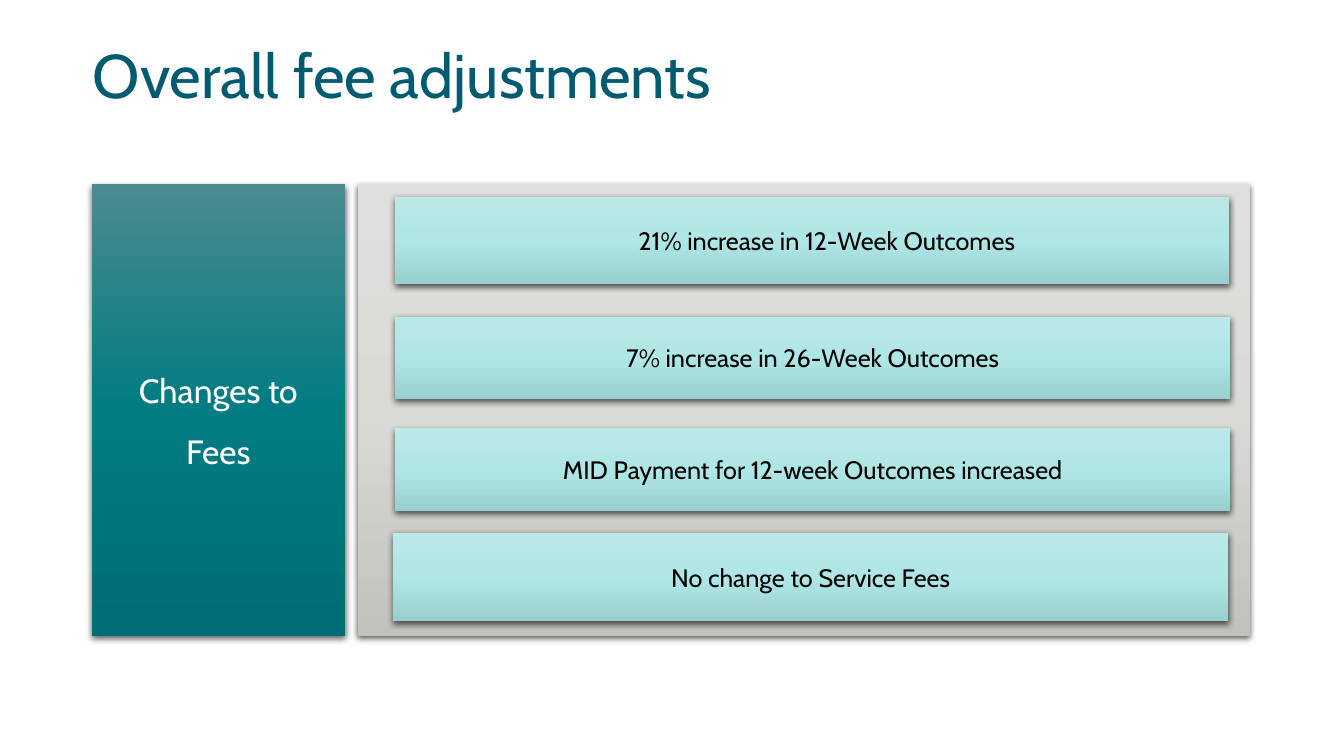
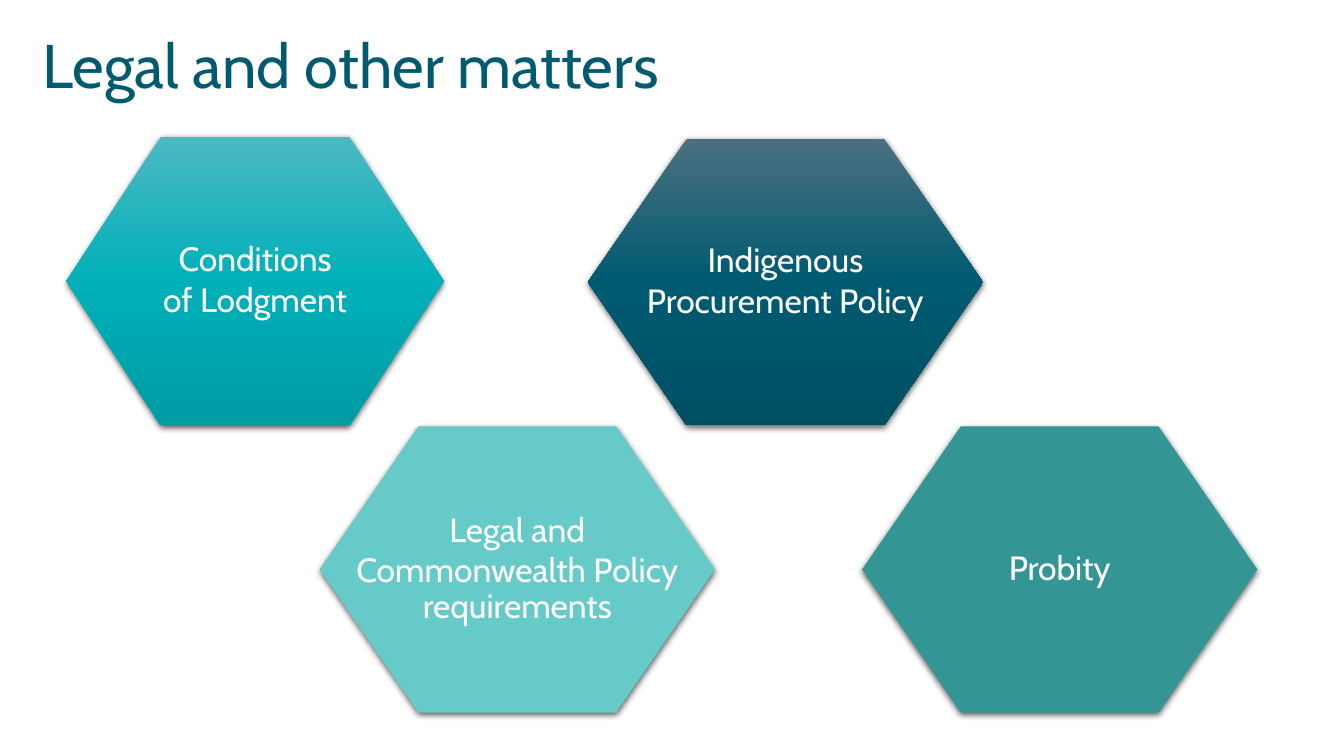
from copy import deepcopy

from pptx import Presentation
from pptx.dml.color import RGBColor
from pptx.enum.shapes import MSO_SHAPE
from pptx.enum.text import MSO_ANCHOR, PP_ALIGN
from pptx.oxml import parse_xml
from pptx.oxml.ns import nsdecls, qn
from pptx.util import Inches, Pt

FONT = "Cabin"
COLORS = {
    "title": "005A70",
    "light": "FFFFFF",
    "dark": "000000",
    "mint": "66CAC8",
    "green": "349694",
}
# Top, middle and bottom of each vertical gradient
GRADIENTS = {
    "panel": ("DFDFDD", "D9D9D6", "C1C1BE"),
    "bar": ("BCE8E7", "AEE7E5", "97D0CF"),
    "heading": ("4B8B90", "007C82", "006E74"),
    "turquoise": ("4BB9C2", "00B0B9", "009CA4"),
    "navy": ("4B7081", "005A70", "005064"),
}

PANEL_TOP, PANEL_HEIGHT = 1.83, 4.48
HEADING = "Changes to Fees"
# Text, (left, top, width, height), left inset
FEE_BARS = [
    ("21% increase in 12-Week Outcomes", (3.92, 1.95, 8.27, 0.87), 0.45),
    ("7% increase in 26-Week Outcomes", (3.92, 3.14, 8.28, 0.82), 0.16),
    ("MID Payment for 12-week Outcomes increased", (3.92, 4.25, 8.28, 0.82), 0.16),
    ("No change to Service Fees", (3.9, 5.29, 8.28, 0.87), 0.16),
]
# Paragraphs, (left, top, width, height), fill
LEGAL_HEXAGONS = [
    (["Conditions", "of Lodgment"], (0.66, 1.36, 3.74, 2.86), "turquoise"),
    (["Indigenous", "Procurement Policy"], (5.83, 1.38, 3.92, 2.84), "navy"),
    (["Legal and", "Commonwealth Policy requirements"], (3.17, 4.23, 3.92, 2.84), "mint"),
    (["Probity"], (8.55, 4.23, 3.92, 2.84), "green"),
]


def rgb(name):
    return RGBColor.from_string(COLORS[name])


def set_text(sp, paragraphs, size, color, align=PP_ALIGN.CENTER,
             anchor=MSO_ANCHOR.MIDDLE, insets=(0, 0, 0, 0), spacing=None, after=None):
    """Fill a shape with paragraphs; insets are left, top, right, bottom in inches."""
    tf = sp.text_frame
    tf.word_wrap = True
    tf.vertical_anchor = anchor
    tf.margin_left, tf.margin_top, tf.margin_right, tf.margin_bottom = map(Inches, insets)
    for i, text in enumerate(paragraphs):
        p = tf.paragraphs[0] if i == 0 else tf.add_paragraph()
        p.alignment = align
        p.line_spacing = spacing
        if after is not None:
            p.space_after = Pt(after)
        r = p.add_run()
        r.text = text
        r.font.name = FONT
        r.font.size = Pt(size)
        r.font.color.rgb = rgb(color)


def style(sp, fill):
    """Give a shape a solid or gradient fill, no outline and a soft shadow below."""
    if fill in GRADIENTS:
        sp.fill.gradient()
        sp.fill.gradient_angle = 270
        stops = sp._element.spPr.find(".//" + qn("a:gsLst"))
        stops.insert(1, deepcopy(stops[0]))
        for i, (stop, color) in enumerate(zip(sp.fill.gradient_stops, GRADIENTS[fill])):
            stop.position = i / 2
            stop.color.rgb = RGBColor.from_string(color)
    else:
        sp.fill.solid()
        sp.fill.fore_color.rgb = rgb(fill)
    sp.line.fill.background()
    sp.shadow.inherit = False
    sp._element.spPr.find(qn("a:effectLst")).append(parse_xml(
        f'<a:outerShdw {nsdecls("a")} blurRad="{Pt(4.5)}" dist="{Pt(1.5)}" '
        'dir="5400000" rotWithShape="0"><a:srgbClr val="000000">'
        '<a:alpha val="63000"/></a:srgbClr></a:outerShdw>'))
    return sp


def add_rect(slide, box, fill):
    return style(slide.shapes.add_shape(MSO_SHAPE.RECTANGLE, *map(Inches, box)), fill)


def add_hexagon(slide, box, fill):
    left, top, width, height = box
    right, bottom, middle = left + width, top + height, top + height / 2
    inset = width / 4
    points = [(Inches(x), Inches(y)) for x, y in [
        (right - inset, top), (left + inset, top), (left, middle),
        (left + inset, bottom), (right - inset, bottom), (right, middle)]]
    outline = slide.shapes.build_freeform(*points[0])
    outline.add_line_segments(points[1:], close=True)
    return style(outline.convert_to_shape(), fill)


def add_titled_slide(prs, title, left, top):
    slide = prs.slides.add_slide(prs.slide_layouts[6])
    box = slide.shapes.add_textbox(*map(Inches, (left, top, 11.49, 0.74)))
    set_text(box, [title], 44, "title", align=PP_ALIGN.LEFT, anchor=MSO_ANCHOR.BOTTOM)
    return slide


def build_fees(prs):
    slide = add_titled_slide(prs, "Overall fee adjustments", 0.92, 0.36)
    add_rect(slide, (3.55, PANEL_TOP, 8.85, PANEL_HEIGHT), "panel")
    for text, box, left_inset in FEE_BARS:
        set_text(add_rect(slide, box, "bar"), [text], 18, "dark",
                 insets=(left_inset, 0.05, 0.16, 0.05))
    heading = add_rect(slide, (0.91, PANEL_TOP, 2.51, PANEL_HEIGHT), "heading")
    set_text(heading, [HEADING], 24, "light", insets=(0.16, 0.04, 0.16, 0.04), spacing=1.5)


def build_legal(prs):
    slide = add_titled_slide(prs, "Legal and other matters", 0.42, 0.26)
    for paragraphs, box, fill in LEGAL_HEXAGONS:
        set_text(add_hexagon(slide, box, fill), paragraphs, 24, "light",
                 insets=(0.04, 0.05, 0.04, 0.05), spacing=0.9, after=3)


def main():
    prs = Presentation()
    prs.slide_width, prs.slide_height = Inches(13.33), Inches(7.5)
    build_fees(prs)
    build_legal(prs)
    prs.save("out.pptx")


if __name__ == "__main__":
    main()
